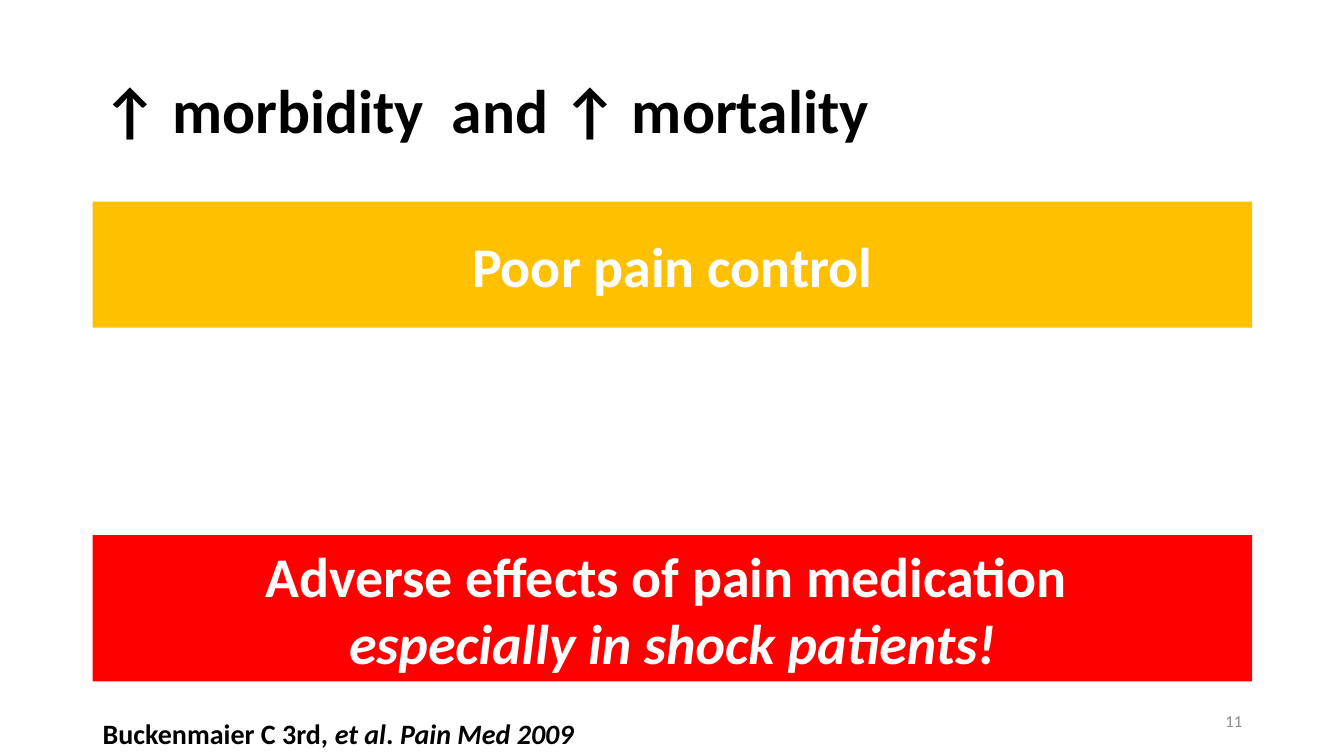
from dataclasses import dataclass

from pptx import Presentation
from pptx.dml.color import RGBColor
from pptx.enum.shapes import MSO_SHAPE
from pptx.enum.text import MSO_ANCHOR as ANCHOR, MSO_AUTO_SIZE as AUTO_SIZE, PP_ALIGN as ALIGN
from pptx.util import Inches, Pt

FONT = "Calibri"
LEFT, WIDTH = 0.92, 11.5


@dataclass
class Run:
    text: str
    italic: bool = False


@dataclass
class Block:
    left: float
    top: float
    width: float
    height: float
    lines: list[list[Run]]
    size: int
    color: str = "000000"
    bold: bool = True
    align: ALIGN = ALIGN.LEFT
    anchor: ANCHOR = ANCHOR.MIDDLE
    line_spacing: float = 1.0
    wrap: bool = True
    fill: str | None = None


def rgb(color: str) -> RGBColor:
    return RGBColor.from_string(color)


def add_block(slide, block: Block) -> None:
    """Draw a filled rectangle if the block has a fill, else a text box."""
    box = [Inches(v) for v in (block.left, block.top, block.width, block.height)]
    if block.fill:
        sp = slide.shapes.add_shape(MSO_SHAPE.RECTANGLE, *box)
        sp.shadow.inherit = False
        sp.fill.solid()
        sp.fill.fore_color.rgb = rgb(block.fill)
        sp.line.fill.background()
    else:
        sp = slide.shapes.add_textbox(*box)
    tf = sp.text_frame
    tf.word_wrap = block.wrap
    tf.auto_size = AUTO_SIZE.NONE if block.wrap else AUTO_SIZE.SHAPE_TO_FIT_TEXT
    tf.vertical_anchor = block.anchor
    for i, runs in enumerate(block.lines):
        p = tf.add_paragraph() if i else tf.paragraphs[0]
        p.alignment = block.align
        p.line_spacing = block.line_spacing
        for run in runs:
            r = p.add_run()
            r.text = run.text
            r.font.name = FONT
            r.font.size = Pt(block.size)
            r.font.bold = block.bold
            r.font.italic = run.italic
            r.font.color.rgb = rgb(block.color)


def banner(top: float, height: float, fill: str, lines: list[list[Run]]) -> Block:
    return Block(LEFT, top, WIDTH, height, lines, 40, "FFFFFF", align=ALIGN.CENTER, fill=fill)


BLOCKS = [
    Block(LEFT, 0.4, WIDTH, 1.45, [[Run("↑ morbidity  and ↑ mortality")]], 44, line_spacing=0.9),
    Block(9.42, 6.95, 3, 0.4, [[Run("11")]], 12, "8C8C8C", bold=False, align=ALIGN.RIGHT),
    banner(5.31, 1.45, "FF0000", [
        [Run("Adverse effects of pain medication ")],
        [Run("especially in shock patients!", italic=True)],
    ]),
    Block(LEFT, 7.06, 4.91, 0.44, [[
        Run("Buckenmaier C 3rd, "),
        Run("et al", italic=True),
        Run(". "),
        Run("Pain Med 2009", italic=True),
    ]], 20, anchor=ANCHOR.TOP, wrap=False),
    banner(2, 1.25, "FFC000", [[Run("Poor pain control")]]),
]


def main() -> None:
    prs = Presentation()
    prs.slide_width, prs.slide_height = Inches(13.33), Inches(7.5)
    slide = prs.slides.add_slide(prs.slide_layouts[6])
    for block in BLOCKS:
        add_block(slide, block)
    prs.save("out.pptx")


if __name__ == "__main__":
    main()
